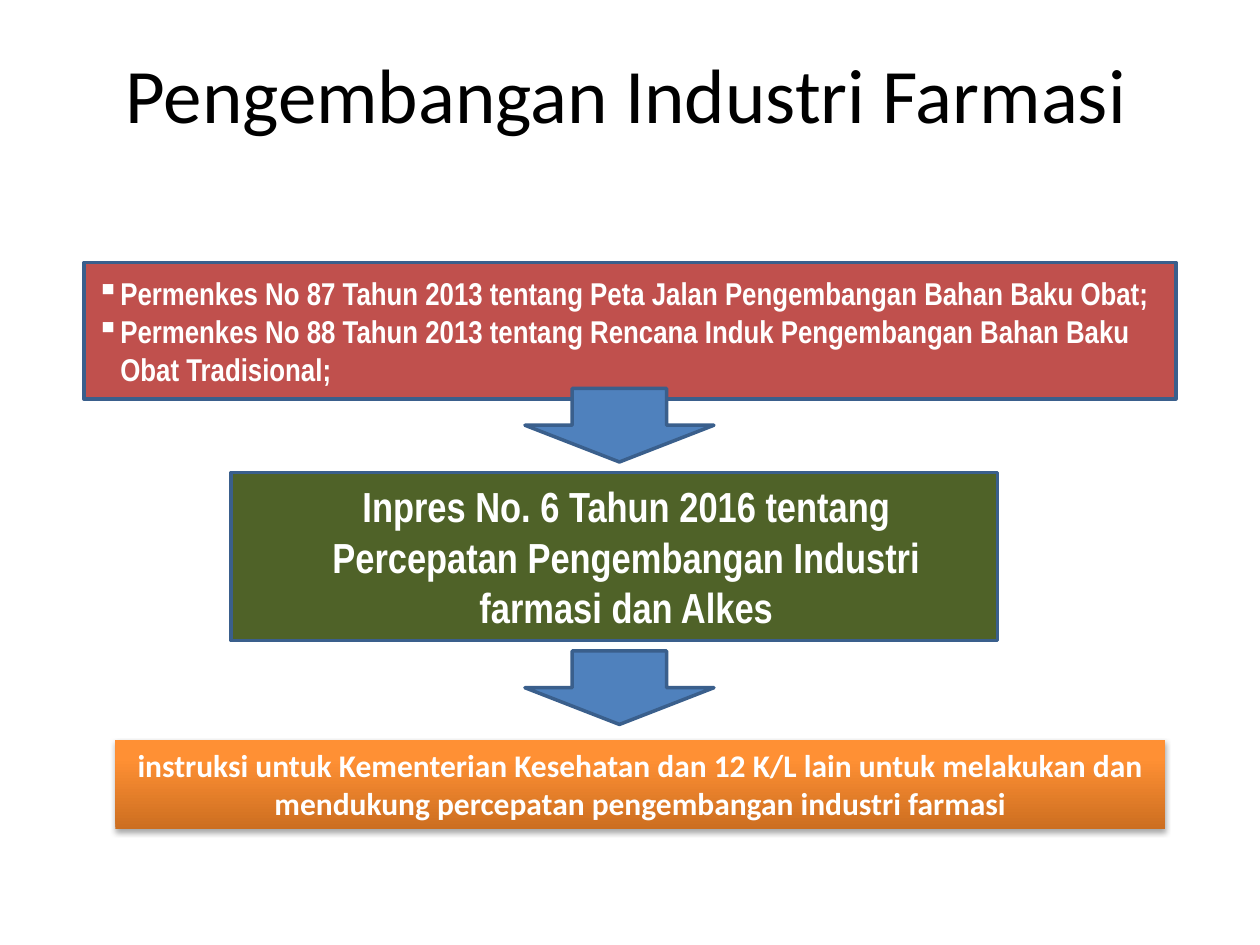
from dataclasses import dataclass

from lxml import etree
from pptx import Presentation
from pptx import util as u
from pptx.dml.color import RGBColor
from pptx.enum import shapes, text
from pptx.oxml import ns


@dataclass(frozen=True)
class Theme:
    heading_font: str = "Calibri"
    body_font: str = "Arial Narrow"
    black: str = "000000"
    white: str = "FFFFFF"
    red: str = "C0504D"
    green: str = "4F6228"
    blue: str = "4F81BD"
    outline: str = "3A5F8C"
    orange_dark: str = "CC6E20"
    orange_light: str = "FF9034"
    title_size: int = 44
    large: int = 24
    normal: int = 18
    line_width: int = 2
    indent: float = 0.19


class FlowSlide:
    """Places elements on a grid of 120 columns by 90 rows."""

    columns, rows = 120, 90

    def __init__(self, presentation, theme):
        self.theme = theme
        self.column = presentation.slide_width / self.columns
        self.row = presentation.slide_height / self.rows
        self.slide = presentation.slides.add_slide(presentation.slide_layouts[6])

    def place(self, left, top, width, height):
        return [int(left * self.column), int(top * self.row),
                int(width * self.column), int(height * self.row)]

    def add_lines(self, shape, lines, font, size, color, bold=True, centred=True,
                  anchor=text.MSO_ANCHOR.MIDDLE, indent=0, bullet=None):
        frame = shape.text_frame
        frame.word_wrap = True
        frame.vertical_anchor = anchor
        for index, line in enumerate(lines):
            paragraph = frame.add_paragraph() if index else frame.paragraphs[0]
            paragraph.alignment = text.PP_ALIGN.CENTER if centred else text.PP_ALIGN.LEFT
            properties = paragraph._p.get_or_add_pPr()
            properties.set("marL", str(u.Inches(indent)))
            if bullet:
                properties.set("indent", str(-u.Inches(indent)))
                etree.SubElement(properties, ns.qn("a:buChar"), char=bullet)
            run = paragraph.add_run()
            run.text = line
            run.font.name, run.font.size, run.font.bold = font, u.Pt(size), bold
            run.font.color.rgb = RGBColor.from_string(color)

    def title(self, line, *area):
        box = self.slide.shapes.add_textbox(*self.place(*area))
        self.add_lines(box, [line], self.theme.heading_font, self.theme.title_size,
                       self.theme.black, bold=False)

    def outlined(self, kind, fill, *area):
        shape = self.slide.shapes.add_shape(kind, *self.place(*area))
        shape.shadow.inherit = False
        shape.fill.solid()
        shape.fill.fore_color.rgb = RGBColor.from_string(fill)
        shape.line.color.rgb = RGBColor.from_string(self.theme.outline)
        shape.line.width = u.Pt(self.theme.line_width)
        return shape

    def panel(self, lines, fill, size, *area, **style):
        shape = self.outlined(shapes.MSO_SHAPE.RECTANGLE, fill, *area)
        self.add_lines(shape, lines, self.theme.body_font, size, self.theme.white,
                       indent=self.theme.indent, **style)

    def arrow(self, *area):
        self.outlined(shapes.MSO_SHAPE.DOWN_ARROW, self.theme.blue, *area)

    def banner(self, line, *area):
        shape = self.slide.shapes.add_shape(shapes.MSO_SHAPE.RECTANGLE, *self.place(*area))
        shape.line.fill.background()
        shape.fill.gradient()
        shape.fill.gradient_angle = 90
        stops = ((0, self.theme.orange_dark), (0.8, self.theme.orange_light))
        for stop, (position, color) in zip(shape.fill.gradient_stops, stops):
            stop.position = position
            stop.color.rgb = RGBColor.from_string(color)
        self.drop_shadow(shape)
        self.add_lines(shape, [line], self.theme.heading_font, self.theme.normal,
                       self.theme.white, anchor=text.MSO_ANCHOR.TOP)

    def drop_shadow(self, shape):
        shape.shadow.inherit = False
        effects = shape._element.spPr.find(ns.qn("a:effectLst"))
        shadow = etree.SubElement(effects, ns.qn("a:outerShdw"), blurRad=str(u.Pt(3.1)),
                                  dist=str(u.Pt(1.8)), dir="5400000", rotWithShape="0")
        color = etree.SubElement(shadow, ns.qn("a:srgbClr"), val=self.theme.black)
        etree.SubElement(color, ns.qn("a:alpha"), val="35000")


def main():
    presentation = Presentation()
    presentation.slide_width, presentation.slide_height = u.Inches(10), u.Inches(7.5)
    theme = Theme()
    flow = FlowSlide(presentation, theme)

    flow.title("Pengembangan Industri Farmasi ", 7, 3.6, 107, 10.4)

    # Regulations: presidential instruction and the ministerial rules above it
    flow.panel(["Inpres No. 6 Tahun 2016 tentang Percepatan Pengembangan Industri "
                "farmasi dan Alkes"], theme.green, theme.large, 22, 45, 73, 16)
    flow.panel(["Permenkes No 87 Tahun 2013 tentang Peta Jalan Pengembangan Bahan Baku Obat;",
                "Permenkes No 88 Tahun 2013 tentang Rencana Induk Pengembangan Bahan Baku "
                "Obat Tradisional;"],
               theme.red, theme.normal, 8, 25, 104, 13, centred=False, bullet="▪")

    # Resulting instruction
    flow.banner("instruksi untuk Kementerian Kesehatan dan 12 K/L lain untuk melakukan dan "
                "mendukung percepatan pengembangan industri farmasi", 11, 70.5, 100, 8.5)

    # Arrows between the steps
    for top in (37, 62):
        flow.arrow(50, top, 18, 7)

    presentation.save("out.pptx")


if __name__ == "__main__":
    main()
